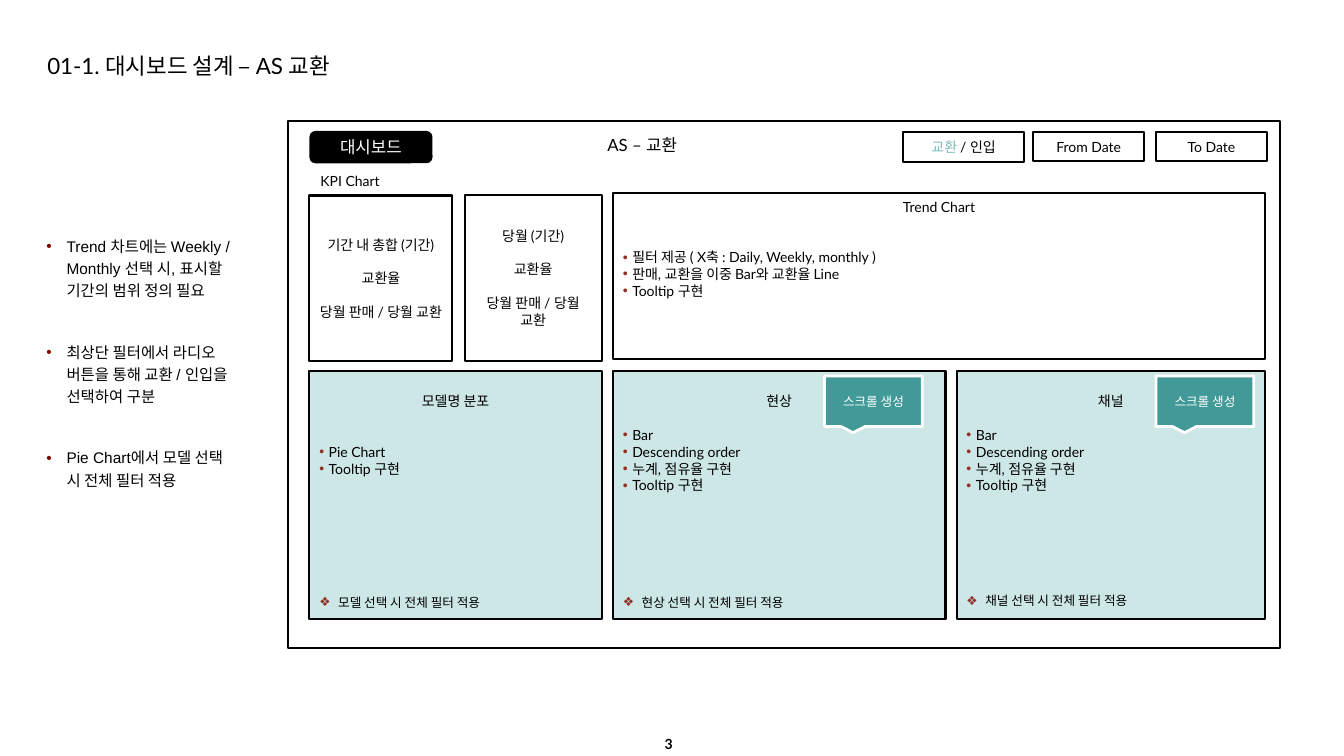
from dataclasses import dataclass

import pptx
import pptx.dml.color
import pptx.enum.shapes
import pptx.enum.text
import pptx.oxml
import pptx.oxml.ns
import pptx.util
from lxml import etree

Pt = pptx.util.Pt
SHAPES = pptx.enum.shapes.MSO_SHAPE
ALIGN = pptx.enum.text.PP_ALIGN
ANCHOR = pptx.enum.text.MSO_ANCHOR


@dataclass(frozen=True)
class Theme:
    font: str = "Lato"
    note_font: str = "Arial"
    black: str = "000000"
    white: str = "FFFFFF"
    panel: str = "CDE6E6"
    callout: str = "419A97"
    selected: str = "7BBCB8"
    bullet: str = "912F27"
    note_bullet: str = "7D0900"
    title_size: float = 16
    heading_size: float = 12
    note_size: float = 11
    body_size: float = 10
    small_size: float = 9


THEME = Theme()


@dataclass
class Line:
    text: str
    size: float = THEME.body_size
    color: str = THEME.black
    font: str = THEME.font
    align: int = ALIGN.CENTER
    before: float = 0
    spacing: float = 1
    bullet: str = ""
    bullet_color: str = THEME.bullet
    indent: float = 0


def rgb(value):
    return pptx.dml.color.RGBColor.from_string(value)


def format_run(run, font, size, color, bold=False):
    run.font.name = font
    run.font.size = Pt(size)
    run.font.color.rgb = rgb(color)
    run.font.bold = bold


def set_bullet(paragraph, character, color, indent):
    properties = paragraph._p.get_or_add_pPr()
    properties.set("marL", str(Pt(indent)))
    properties.set("indent", str(-Pt(indent)))
    qn = pptx.oxml.ns.qn
    bullet_color = etree.SubElement(properties, qn("a:buClr"))
    etree.SubElement(bullet_color, qn("a:srgbClr"), val=color)
    etree.SubElement(properties, qn("a:buFont"), typeface="Arial")
    etree.SubElement(properties, qn("a:buChar"), char=character)


def write_lines(text_frame, lines, anchor, top_inset=3.6, side_inset=7.2):
    text_frame.word_wrap = True
    text_frame.auto_size = pptx.enum.text.MSO_AUTO_SIZE.NONE
    text_frame.vertical_anchor = anchor
    text_frame.margin_top, text_frame.margin_bottom = Pt(top_inset), Pt(3.6)
    text_frame.margin_left = text_frame.margin_right = Pt(side_inset)
    text_frame.text = "\n".join(line.text for line in lines)
    for paragraph, line in zip(text_frame.paragraphs, lines):
        paragraph.alignment = line.align
        paragraph.line_spacing = line.spacing
        paragraph.space_before = Pt(line.before)
        if line.bullet:
            set_bullet(paragraph, line.bullet, line.bullet_color, line.indent)
        for run in paragraph.runs:
            format_run(run, line.font, line.size, line.color)


def add_box(slide, bounds, lines=(), fill=THEME.white, kind=SHAPES.RECTANGLE,
            line_color=THEME.black, line_width=1.5, anchor=ANCHOR.MIDDLE, top_inset=3.6):
    shape = slide.shapes.add_shape(kind, *map(Pt, bounds))
    shape.shadow.inherit = False
    shape.fill.solid()
    shape.fill.fore_color.rgb = rgb(fill)
    shape.line.color.rgb = rgb(line_color)
    shape.line.width = Pt(line_width)
    if lines:
        write_lines(shape.text_frame, lines, anchor, top_inset)
    return shape


def add_label(slide, bounds, lines, anchor=ANCHOR.TOP, **insets):
    label = slide.shapes.add_textbox(*map(Pt, bounds))
    write_lines(label.text_frame, lines, anchor, **insets)
    return label


def bullet_lines(texts, gap):
    """List whose first item stands gap points below what precedes it."""
    return [Line(text, align=ALIGN.LEFT, bullet="•", indent=6.75, before=0 if index else gap)
            for index, text in enumerate(texts)]


def add_panel(slide, left, width, heading, items, list_gap, footer, footer_gap):
    note = Line(footer, THEME.small_size, align=ALIGN.LEFT, bullet="❖",
                indent=13.5, before=footer_gap)
    add_box(slide, (left, 265, width, 177.1),
            [Line(heading), *bullet_lines(items, list_gap), note],
            THEME.panel, anchor=ANCHOR.TOP, top_inset=15.6)


def add_scroll_callout(slide, left):
    add_box(slide, (left, 268.6, 69.8, 36),
            [Line("스크롤 생성", THEME.small_size, THEME.white)], THEME.callout,
            SHAPES.RECTANGULAR_CALLOUT, THEME.white, 2)


def add_kpi_card(slide, bounds, *texts):
    add_box(slide, bounds, [Line(text, before=12 if index else 0)
                            for index, text in enumerate(texts)])


def add_title(slide, text):
    title = slide.shapes.title
    title.left, title.top, title.width, title.height = map(Pt, (26.6, 36, 229.7, 34.6))
    write_lines(title.text_frame, [Line(text, THEME.title_size, align=ALIGN.LEFT, spacing=0.9)],
                ANCHOR.TOP)
    title.text_frame.margin_right = Pt(14)


def add_notes_list(slide, texts):
    notes = [Line(text, THEME.note_size, font=THEME.note_font, align=ALIGN.LEFT,
                  before=28 if index else 0, spacing=1.2, bullet="•",
                  bullet_color=THEME.note_bullet, indent=14.4)
             for index, text in enumerate(texts)]
    add_label(slide, (27.4, 138.2, 148.3, 235.4), notes, top_inset=28.5, side_inset=5.76)


def add_filters(slide):
    mode = add_box(slide, (645.1, 94.3, 86.4, 21.6), [Line("교환 ", color=THEME.selected)])
    other_mode = mode.text_frame.paragraphs[0].add_run()
    other_mode.text = "/ 인입"
    format_run(other_mode, THEME.font, THEME.body_size, THEME.black)
    for left, text in ((738, "From Date"), (825.8, "To Date")):
        add_box(slide, (left, 94.3, 79.2, 20.9), [Line(text)])


def main():
    presentation = pptx.Presentation()
    presentation.slide_width, presentation.slide_height = Pt(960), Pt(540)
    slide = presentation.slides.add_slide(presentation.slide_layouts[5])
    add_title(slide, "01-1. 대시보드 설계 – AS 교환")
    add_notes_list(slide, (
        "Trend 차트에는 Weekly / Monthly 선택 시, 표시할 기간의 범위 정의 필요",
        "최상단 필터에서 라디오 버튼을 통해 교환 / 인입을 선택하여 구분",
        "Pie Chart에서 모델 선택 시 전체 필터 적용"))

    add_box(slide, (206, 86.4, 708.5, 376.6))
    add_box(slide, (221.8, 94.3, 86.4, 21.6), [Line("대시보드", THEME.heading_size, THEME.white)],
            THEME.black, SHAPES.ROUNDED_RECTANGLE)
    add_label(slide, (362.2, 92.9, 193, 21.6), [Line("AS – 교환", THEME.heading_size)])
    add_filters(slide)

    add_label(slide, (221.8, 119.5, 193, 19.4), [Line("KPI Chart", align=ALIGN.LEFT)])
    add_kpi_card(slide, (221, 139.7, 102.2, 118.1),
                 "기간 내 총합 (기간)", "교환율", "당월 판매 / 당월 교환")
    add_kpi_card(slide, (331.9, 139, 97.9, 118.8),
                 "당월 (기간)", "교환율", "당월 판매 / 당월 교환")
    trend_items = ("필터 제공 ( X축 : Daily, Weekly, monthly )",
                   "판매, 교환을 이중 Bar와 교환율 Line", "Tooltip 구현")
    add_box(slide, (437.8, 138.2, 465.8, 118.1),
            [Line("Trend Chart"), *bullet_lines(trend_items, 24)], anchor=ANCHOR.TOP)

    bar_items = ("Bar", "Descending order", "누계, 점유율 구현", "Tooltip 구현")
    add_panel(slide, 221, 208.8, "모델명 분포", ("Pie Chart", "Tooltip 구현"), 24,
              "모델 선택 시 전체 필터 적용", 84)
    add_panel(slide, 437.8, 237.6, "현상", bar_items, 12, "현상 선택 시 전체 필터 적용", 72)
    add_panel(slide, 683.3, 220.3, "채널", bar_items, 12, "채널 선택 시 전체 필터 적용", 71)
    for left in (589, 825.8):
        add_scroll_callout(slide, left)

    page_number = add_label(slide, (458.6, 523.4, 38.2, 16.6), [Line("3")], ANCHOR.MIDDLE)
    page_number.text_frame.paragraphs[0].runs[0].font.bold = True
    presentation.save("out.pptx")


if __name__ == "__main__":
    main()
